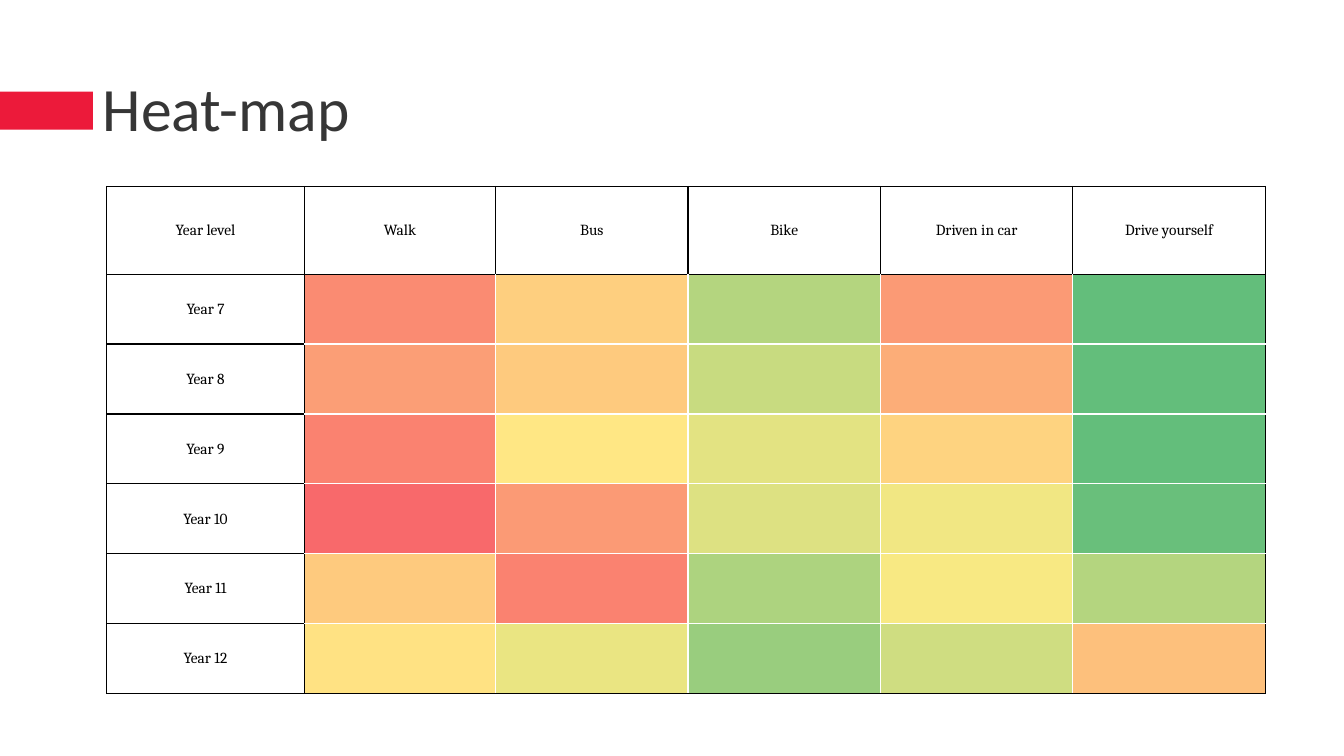
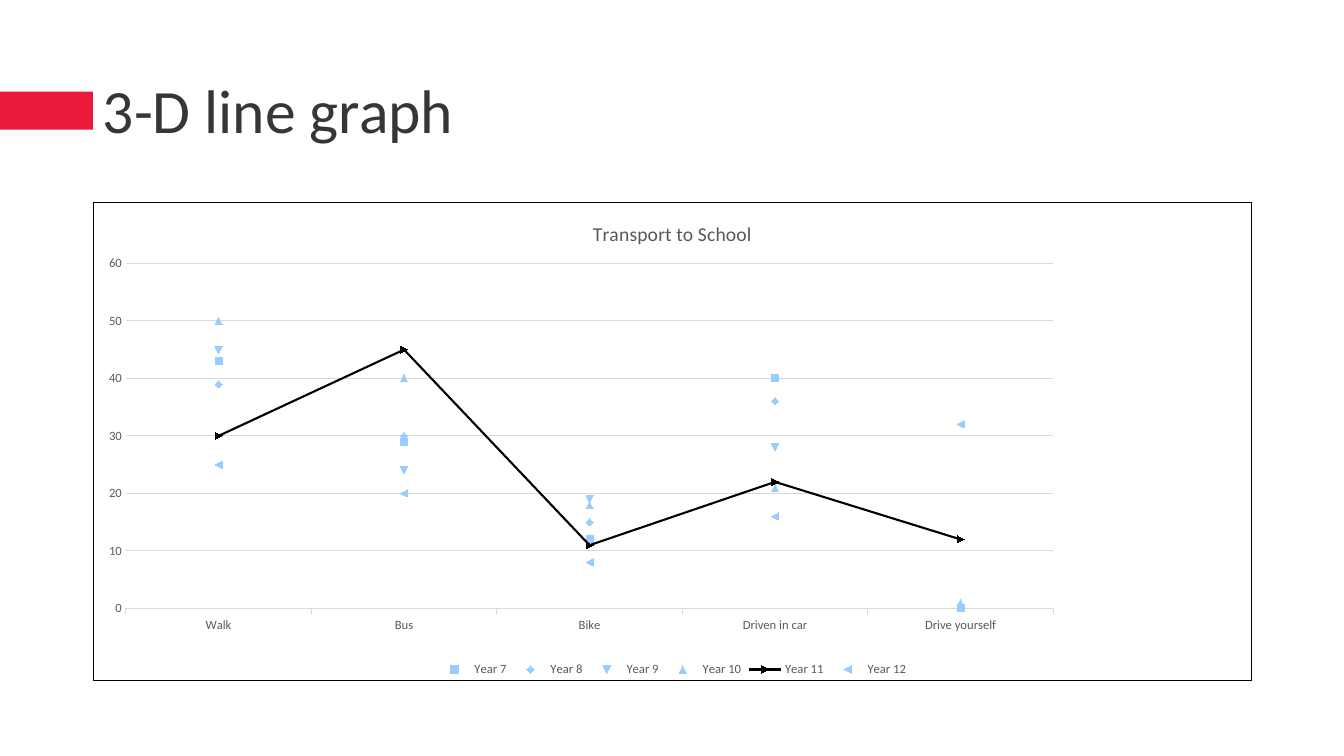
from dataclasses import dataclass

from lxml import etree
from pptx import Presentation
from pptx import util as u
from pptx.chart import data as cd
from pptx.dml import color as dc
from pptx.enum import chart as ec, shapes, text
from pptx.oxml import ns


@dataclass(frozen=True)
class Theme:
    red: str = "EC1A3A"
    dark: str = "363636"
    black: str = "000000"
    white: str = "FFFFFF"
    grey: str = "595959"
    rule: str = "D9D9D9"
    pale: str = "99CCFF"
    sans: str = "Calibri"
    serif: str = "Cambria"
    head: float = 44
    sub: float = 14
    cell: float = 11
    label: float = 9


MODES = ["Walk", "Bus", "Bike", "Driven in car", "Drive yourself"]

HEAT = {
    "Year 7": "FA8B72 FECF7F B4D57F FB9A75 63BE7B",
    "Year 8": "FB9E76 FECA7E C8DB80 FCAD78 63BE7B",
    "Year 9": "FA8270 FFE784 E3E382 FED380 63BE7B",
    "Year 10": "F8696B FB9A75 DDE182 F1E783 69BF7B",
    "Year 11": "FECA7E FA8270 ADD37F F8E983 B4D57F",
    "Year 12": "FFE283 EAE582 99CD7E CFDD81 FDC07C",
}

COUNTS = {
    "Year 7": (43, 29, 12, 40, 0),
    "Year 8": (39, 30, 15, 36, 0),
    "Year 9": (45, 24, 19, 28, 0),
    "Year 10": (50, 40, 18, 21, 1),
    "Year 11": (30, 45, 11, 22, 12),
    "Year 12": (25, 20, 8, 16, 32),
}


def add(node, tag, **attrs):
    return etree.SubElement(node, ns.qn(tag), attrs)


def stroke(node, tag, tint, width):
    line = add(node, tag, w=str(u.Pt(width)))
    add(add(line, "a:solidFill"), "a:srgbClr", val=tint)


def paint(fill, tint):
    fill.solid()
    fill.fore_color.rgb = dc.RGBColor.from_string(tint)


def dress(font, size, tint, face):
    font.size = u.Pt(size)
    font.bold = False
    font.name = face
    font.color.rgb = dc.RGBColor.from_string(tint)


class Deck:
    def __init__(self, theme):
        self.theme = theme
        self.prs = Presentation()
        self.prs.slide_width = u.Cm(33.87)
        self.prs.slide_height = u.Cm(19.05)
        self.slide = None

    def start(self, title, top):
        self.slide = self.prs.slides.add_slide(self.prs.slide_layouts[5])
        self.band()
        self.title(title, top)

    def band(self):
        bar = self.slide.shapes.add_shape(
            shapes.MSO_SHAPE.RECTANGLE, 0, u.Cm(2.31), u.Cm(2.34), u.Cm(0.96))
        bar.shadow.inherit = False
        paint(bar.fill, self.theme.red)
        bar.line.fill.background()

    def title(self, words, top):
        box = self.slide.shapes.title
        box.left, box.top = u.Cm(2.34), u.Cm(top)
        box.width, box.height = u.Cm(29.21), u.Cm(3.68)
        frame = box.text_frame
        frame.auto_size = text.MSO_AUTO_SIZE.NONE
        frame.vertical_anchor = text.MSO_ANCHOR.MIDDLE
        para = frame.paragraphs[0]
        para.alignment = text.PP_ALIGN.LEFT
        para.line_spacing = 0.9
        run = para.add_run()
        run.text = words
        dress(run.font, self.theme.head, self.theme.dark, self.theme.sans)

    def cell(self, cell, words, tint, edges):
        cell.margin_left = cell.margin_right = cell.margin_top = u.Cm(0.02)
        cell.margin_bottom = 0
        cell.vertical_anchor = text.MSO_ANCHOR.MIDDLE
        props = cell._tc.get_or_add_tcPr()
        for side, edge in zip("LRTB", edges):
            stroke(props, f"a:ln{side}", edge, 1)
        paint(cell.fill, tint)
        if words:
            para = cell.text_frame.paragraphs[0]
            para.alignment = text.PP_ALIGN.CENTER
            run = para.add_run()
            run.text = words
            dress(run.font, self.theme.cell, self.theme.black, self.theme.serif)

    def heat(self, modes, rows, left, top, widths, heights):
        th = self.theme
        grid = self.slide.shapes.add_table(
            len(heights), len(widths), u.Cm(left), u.Cm(top),
            u.Cm(sum(widths)), u.Cm(sum(heights))).table
        grid.first_row = grid.horz_banding = False
        for col, width in zip(grid.columns, widths):
            col.width = u.Cm(width)
        for row, height in zip(grid.rows, heights):
            row.height = u.Cm(height)
        for c, words in enumerate(["Year level", *modes]):
            self.cell(grid.cell(0, c), words, th.white, [th.black] * 4)
        for r, (year, tints) in enumerate(rows.items(), 1):
            self.cell(grid.cell(r, 0), year, th.white, [th.black] * 4)
            for c, tint in enumerate(tints.split(), 1):
                outer = (c == 1, c == len(modes), r == 1, r == len(rows))
                edges = [th.black if o else th.white for o in outer]
                self.cell(grid.cell(r, c), "", tint, edges)

    def graph(self, title, modes, rows, strong, left, top, width, height):
        th = self.theme
        data = cd.CategoryChartData()
        data.categories = modes
        for name, vals in rows.items():
            data.add_series(name, vals)
        chart = self.slide.shapes.add_chart(
            ec.XL_CHART_TYPE.LINE_MARKERS, u.Cm(left), u.Cm(top),
            u.Cm(width), u.Cm(height), data).chart
        dress(chart.font, 10, th.black, th.sans)
        run = chart.chart_title.text_frame.paragraphs[0].add_run()
        run.text = title
        dress(run.font, th.sub, th.grey, th.sans)
        chart.chart_title.include_in_layout = False
        chart.has_legend = True
        chart.legend.position = ec.XL_LEGEND_POSITION.BOTTOM
        chart.legend.include_in_layout = False
        dress(chart.legend.font, th.label, th.grey, th.sans)
        self.axes(chart)
        chart.plots[0].vary_by_categories = False
        for line in chart.plots[0].series:
            self.line(line, line.name == strong)
        self.frame(chart, x=0.028, y=0.128, w=0.801, h=0.721)

    def axes(self, chart):
        th = self.theme
        base, side = chart.category_axis, chart.value_axis
        for axis in (base, side):
            dress(axis.tick_labels.font, th.label, th.grey, th.sans)
            axis.minor_tick_mark = ec.XL_TICK_MARK.NONE
        base.major_tick_mark = ec.XL_TICK_MARK.OUTSIDE
        side.major_tick_mark = ec.XL_TICK_MARK.NONE
        side.minimum_scale, side.maximum_scale, side.major_unit = 0, 60, 10
        side.format.line.fill.background()
        side.has_major_gridlines = True
        for line in (base.format.line, side.major_gridlines.format.line):
            paint(line.fill, th.rule)
            line.width = u.Pt(0.75)

    def line(self, line, strong):
        th = self.theme
        tint = th.black if strong else th.pale
        line.smooth = False
        line.marker.style = ec.XL_MARKER_STYLE.AUTOMATIC
        line.marker.size = 5
        paint(line.marker.format.fill, tint)
        line.marker.format.line.fill.background()
        if strong:
            paint(line.format.line.fill, tint)
            line.format.line.width = u.Pt(1.5)
        else:
            line.format.line.fill.background()

    def frame(self, chart, **area):
        root = chart._chartSpace
        plot = root.find(".//" + ns.qn("c:plotArea"))
        for old in plot.findall(ns.qn("c:layout")):
            plot.remove(old)
        layout = add(plot, "c:layout")
        plot.insert(0, layout)
        spot = add(layout, "c:manualLayout")
        add(spot, "c:layoutTarget", val="inner")
        for key in "xy":
            add(spot, f"c:{key}Mode", val="edge")
        for key, share in area.items():
            add(spot, f"c:{key}", val=str(share))
        props = add(root, "c:spPr")
        root.find(ns.qn("c:chart")).addnext(props)
        add(props, "a:noFill")
        stroke(props, "a:ln", self.theme.black, 0.75)


def main():
    deck = Deck(Theme())
    deck.start("Heat-map", 0.97)
    deck.heat(MODES, HEAT, 2.69, 4.7,
              [4.98, 4.82] + [4.85] * 4, [2.21] + [1.76] * 6)
    deck.start("3-D line graph", 1.02)
    deck.graph("Transport to School", MODES, COUNTS, "Year 11",
               2.34, 5.08, 29.21, 12.09)
    deck.prs.save("out.pptx")


if __name__ == "__main__":
    main()
